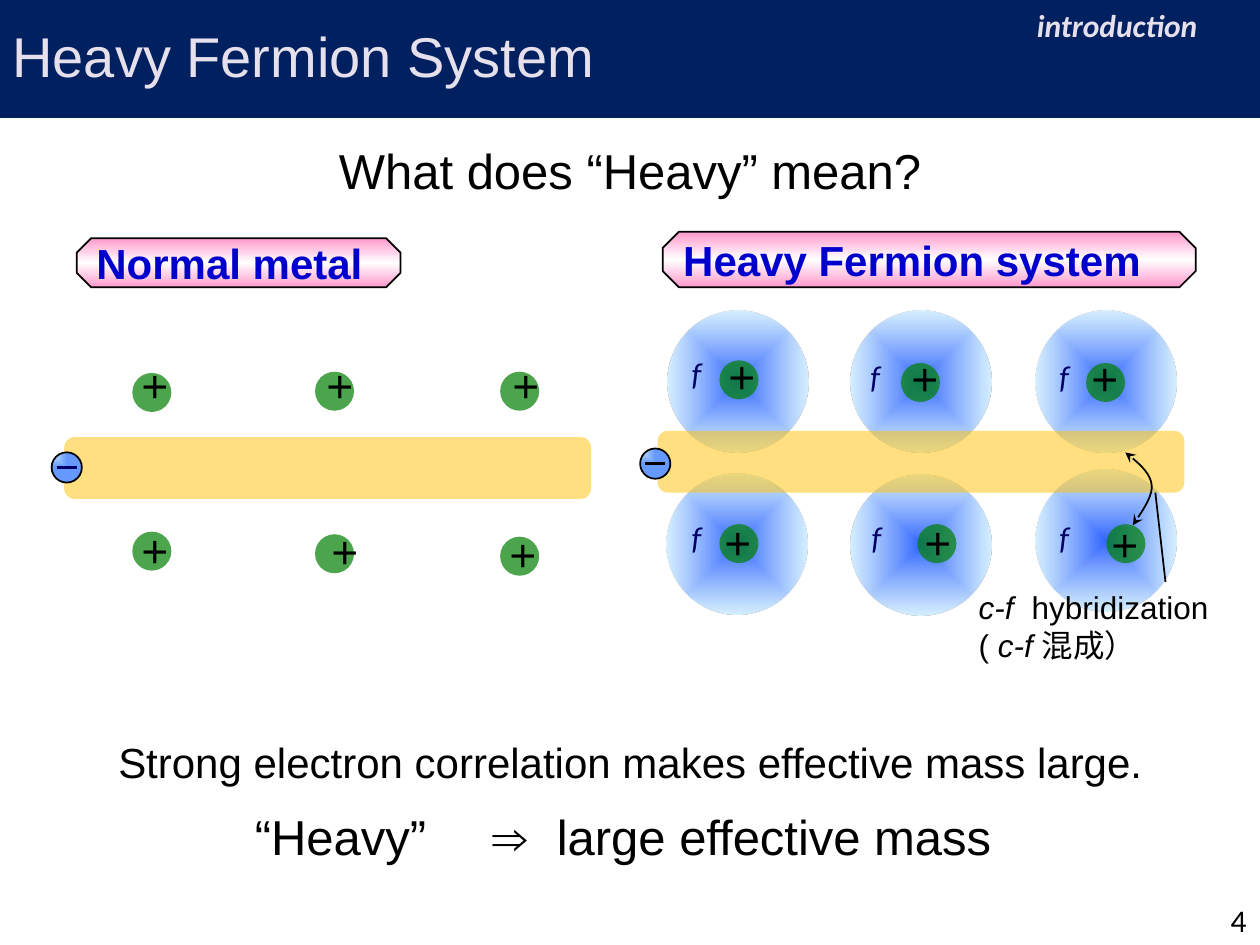
from lxml import etree
from pptx import Presentation
from pptx.dml.color import RGBColor
from pptx.enum.shapes import MSO_CONNECTOR, MSO_SHAPE
from pptx.enum.text import MSO_ANCHOR, PP_ALIGN
from pptx.oxml.ns import qn
from pptx.util import Pt

OVAL, ROUND = MSO_SHAPE.OVAL, MSO_SHAPE.ROUNDED_RECTANGLE
OCTAGON, RECT = MSO_SHAPE.OCTAGON, MSO_SHAPE.RECTANGLE
STRAIGHT = MSO_CONNECTOR.STRAIGHT
LEFT, CENTER = PP_ALIGN.LEFT, PP_ALIGN.CENTER
TOP, MIDDLE = MSO_ANCHOR.TOP, MSO_ANCHOR.MIDDLE

COLORS = {
    "black": "000000", "navy": "002060", "ink": "000066", "label": "0000CC",
    "pale": "E6E0EC", "ion": "008000", "band": "FFC000", "pink": "FF99CC",
    "white": "FFFFFF", "core": "3366FF", "sky": "CCECFF", "blue": "6699FF",
}
# Gradients: stops of (place, colour, opacity), then an angle or a focus box
CLOUD = dict(stops=[(0, "core", 100), (100, "sky", 80)],
             kind="shape", focus=(50, 50, 50, 50))
BALL = dict(stops=[(0, "sky", 100), (100, "blue", 100)],
            kind="rect", focus=(0, 0, 100, 100))
PLATE = dict(stops=[(0, "pink", 100), (50, "white", 100), (100, "pink", 100)],
             angle=90)


def paint(name):
    return RGBColor.from_string(COLORS[name])


def node(parent, tag, **attrs):
    return etree.SubElement(parent, qn("a:" + tag),
                            {key: str(val) for key, val in attrs.items()})


def write(frame, text, size=18, font="Arial", color="black", bold=False,
          italic=False, align=LEFT, anchor=TOP, wrap=True, tabs=()):
    """Fill a frame; each line is a paragraph and *stars* mark italics."""
    frame.word_wrap = wrap
    frame.vertical_anchor = anchor
    for i, line in enumerate(text.split("\n")):
        para = frame.add_paragraph() if i else frame.paragraphs[0]
        para.alignment = align
        if tabs:
            stops = node(para._p.get_or_add_pPr(), "tabLst")
            for stop in tabs:
                node(stops, "tab", pos=Pt(stop), algn="l")
        for j, part in enumerate(line.split("*")):
            if part:
                run = para.add_run()
                run.text = part
                face = run.font
                face.size, face.name, face.bold = Pt(size), font, bold
                face.italic = italic or j % 2 == 1
                face.color.rgb = paint(color)


class Board:
    def __init__(self, slide):
        self.shapes = slide.shapes

    def shape(self, kind, x, y, w, h, fill, line=None, width=1, alpha=100):
        item = self.shapes.add_shape(kind, Pt(x), Pt(y), Pt(w), Pt(h))
        item.shadow.inherit = False
        if isinstance(fill, dict):
            self.blend(item, **fill)
        else:
            item.fill.solid()
            item.fill.fore_color.rgb = paint(fill)
            if alpha < 100:
                tone = item._element.spPr.find(".//" + qn("a:srgbClr"))
                node(tone, "alpha", val=alpha * 1000)
        if line:
            self.stroke(item, line, width)
        else:
            item.line.fill.background()
        return item

    def blend(self, item, stops, angle=None, kind=None, focus=()):
        item.fill.background()
        props = item._element.spPr
        grad = etree.Element(qn("a:gradFill"), rotWithShape="1")
        group = node(grad, "gsLst")
        for place, color, alpha in stops:
            stop = node(group, "gs", pos=place * 1000)
            tone = node(stop, "srgbClr", val=COLORS[color])
            if alpha < 100:
                node(tone, "alpha", val=alpha * 1000)
        if kind:
            sides = {s: v * 1000 for s, v in zip("ltrb", focus)}
            node(node(grad, "path", path=kind), "fillToRect", **sides)
        else:
            node(grad, "lin", ang=angle * 60000, scaled=1)
        props.replace(props.find(qn("a:noFill")), grad)

    def stroke(self, item, color, width):
        item.line.color.rgb = paint(color)
        item.line.width = Pt(width)

    def text(self, x, y, w, h, text, **fmt):
        box = self.shapes.add_textbox(Pt(x), Pt(y), Pt(w), Pt(h))
        write(box.text_frame, text, **fmt)

    def line(self, x1, y1, x2, y2, color="black", width=1):
        item = self.shapes.add_connector(STRAIGHT, Pt(x1), Pt(y1), Pt(x2), Pt(y2))
        self.stroke(item, color, width)
        node(item._element.spPr, "effectLst")

    def curve(self, start, *bends, steps=10):
        """Double-headed arrow along cubic curves."""
        points, last = [], start
        for bend in bends:
            knots = (last, *bend)
            for i in range(1, steps + 1):
                t = i / steps
                parts = ((1 - t) ** 3, 3 * t * (1 - t) ** 2, 3 * t * t * (1 - t), t ** 3)
                points.append(tuple(Pt(sum(p * k[axis] for p, k in zip(parts, knots)))
                                    for axis in (0, 1)))
            last = bend[-1]
        pen = self.shapes.build_freeform(Pt(start[0]), Pt(start[1]))
        pen.add_line_segments(points, close=False)
        item = pen.convert_to_shape()
        item.shadow.inherit = False
        item.fill.background()
        self.stroke(item, "black", 1)
        edge = item.line._get_or_add_ln()
        for end in ("headEnd", "tailEnd"):
            node(edge, end, type="stealth")

    def plate(self, x, y, w, h, text):
        item = self.shape(OCTAGON, x, y, w, h, PLATE, "black")
        item.adjustments[0] = 0.293
        write(item.text_frame, text, size=24, color="label", bold=True, anchor=MIDDLE)

    def ion(self, x, y):
        self.shape(OVAL, x, y, 22.3, 22.3, "ion", alpha=70)

    def plus(self, x, y, w, wrap):
        self.text(x, y, w, 28.8, "＋", font="Calibri", bold=True,
                  align=CENTER, wrap=wrap)

    def band(self, x, y):
        self.shape(ROUND, x, y, 301, 35.3, "band", alpha=50)

    def electron(self, x, y, color):
        self.shape(OVAL, x, y, 17.3, 17.3, BALL, "black")
        self.line(x + 2.9, y + 8.65, x + 14.4, y + 8.65, color, 1.5)


def main():
    deck = Presentation()
    deck.slide_width, deck.slide_height = Pt(720), Pt(540)
    board = Board(deck.slides.add_slide(deck.slide_layouts[6]))

    # Panel labels
    board.plate(43.9, 136.1, 185, 28.1, "Normal metal")
    board.plate(378.7, 132.5, 304.6, 31.7, "Heavy Fermion system")

    # Heavy fermion lattice: corners of cloud, ion, f and plus at each site
    sites = [
        ((381.6, 177.8), (411.1, 205.9), (388.1, 198.7), (407.5, 201.6)),
        ((486, 177.8), (514.8, 207.4), (490.3, 200.2), (511.9, 203)),
        ((591.8, 177.8), (620.6, 207.4), (598.3, 200.2), (614.9, 203)),
        ((380.9, 270.7), (411.1, 299.5), (388.1, 292.3), (405.4, 296.6)),
        ((486, 271.4), (524.2, 299.5), (491, 292.3), (519.8, 296.6)),
        ((591.8, 268.6), (632.2, 299.5), (598.3, 292.3), (626.4, 297.4)),
    ]
    for cloud, ion, mark, plus in sites:
        board.shape(OVAL, *cloud, 80.6, 80.6, CLOUD)
        board.ion(*ion)
        board.text(*mark, 39.6, 28.8, "f", font="Calibri", color="ink", italic=True)
        board.plus(*plus, 33.1, wrap=False)
    board.band(375.8, 246.2)

    # Hybridization arrow and note
    board.curve((643, 258.5),
                ((650.2, 264.2), (657.4, 270), (658.1, 277.2)),
                ((658.8, 283.7), (653, 291.6), (647.3, 300.2)))
    board.line(660.2, 281.5, 666, 332.6)
    board.text(552.2, 332.6, 160, 51.1, "*c-f*\thybridization\n( *c-f *混成）",
               tabs=[30.3])

    # Normal metal lattice: ion corner, then plus corner and width
    atoms = [
        ((75.6, 213.1), (72.7, 206.6, 28.8)),
        ((180, 212.4), (178.6, 206.6, 25.9)),
        ((285.8, 212.4), (284.4, 206.6, 27.4)),
        ((75.6, 303.8), (72.7, 301, 31.7)),
        ((180, 305.3), (181.4, 301.7, 24.5)),
        ((285.8, 306.7), (281.5, 303.1, 35.3)),
    ]
    for ion, plus in atoms:
        board.ion(*ion)
        board.plus(*plus, wrap=True)

    # Electrons
    board.electron(365.8, 256.3, "black")
    board.band(36.7, 249.8)
    board.electron(29.5, 258.5, "ink")

    # Question and conclusions
    board.text(0, 77, 720, 63.4, "What does “Heavy” mean?", size=28, align=CENTER)
    board.text(60.5, 417.6, 605.5, 36,
               "Strong electron correlation makes effective mass large.", size=24)
    board.text(138.5, 457.2, 475, 41, "“Heavy”\t⇒\tlarge effective mass",
               size=28, tabs=[136, 172.6])

    # Header and page number
    board.shape(RECT, 0, 0, 720, 66.2, "navy", "navy", 2)
    board.text(0, 8.6, 349.9, 46.1, "Heavy Fermion System", size=32, color="pale")
    board.text(585.4, 0, 134.6, 28.8, "introduction", font="Calibri",
               color="pale", bold=True, italic=True)
    board.text(696.2, 511.2, 23.8, 28.8, "4", font="Calibri")

    deck.save("out.pptx")


if __name__ == "__main__":
    main()
